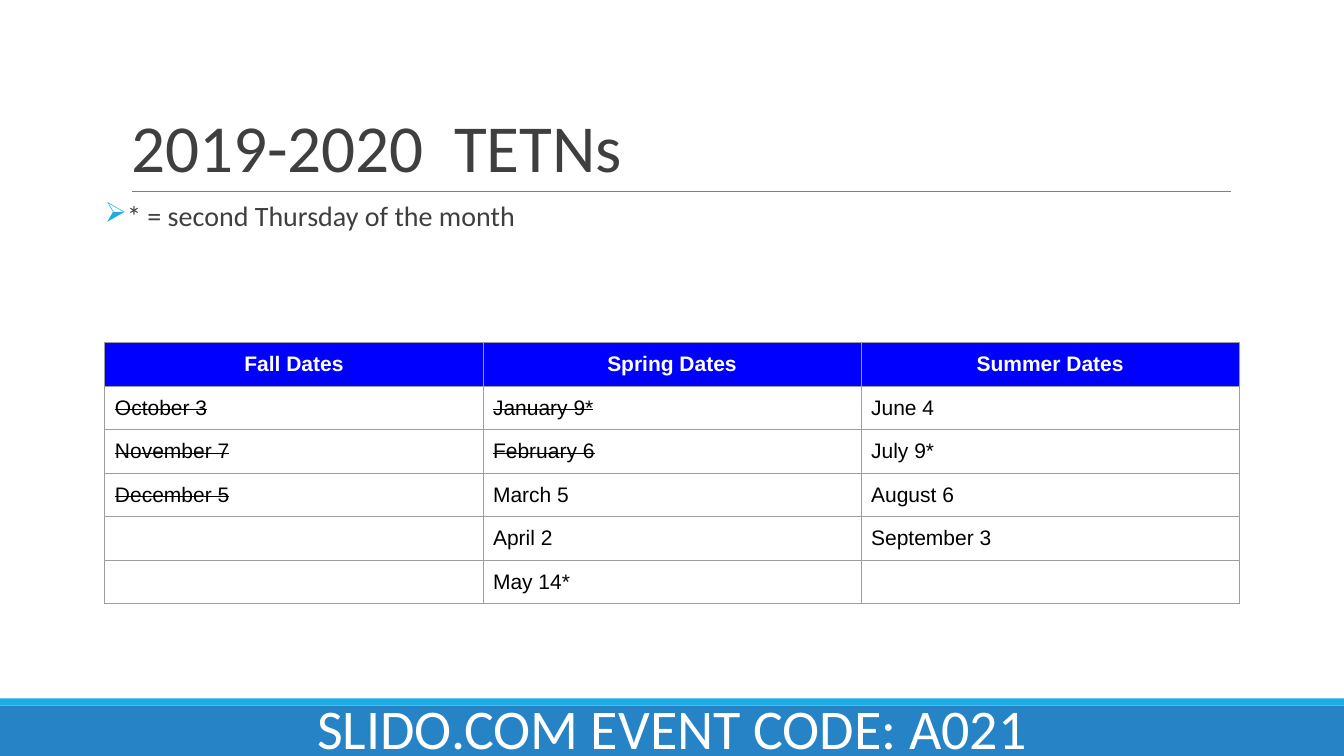
from dataclasses import dataclass
from lxml import etree
from pptx import Presentation
from pptx.dml.color import RGBColor as RGB
from pptx.enum.shapes import MSO_CONNECTOR as Line, MSO_SHAPE as Shape
from pptx.enum.text import MSO_ANCHOR as Anchor, MSO_AUTO_SIZE as Fit, PP_ALIGN as Align
from pptx.oxml import parse_xml
from pptx.oxml.ns import qn
from pptx.util import Inches, Pt


@dataclass(frozen=True)
class Theme:
    font: str = "Calibri"
    grid: str = "Arial"
    mark: str = "Wingdings"
    ink: str = "3F3F3F"
    rule: str = "7F7F7F"
    edge: str = "9E9E9E"
    head: str = "0000FF"
    bar: str = "2683C6"
    strip: str = "1CADE4"
    white: str = "FFFFFF"
    black: str = "000000"
    title: int = 48
    code: int = 40
    note: int = 20
    cell: int = 15


THEME = Theme()
NS = "http://schemas.openxmlformats.org/drawingml/2006/main"
HEADS = ["Fall Dates", "Spring Dates", "Summer Dates"]
DATES = [
    ["October 3", "January 9*", "June 4"],
    ["November 7", "February 6", "July 9*"],
    ["December 5", "March 5", "August 6"],
    ["", "April 2", "September 3"],
    ["", "May 14*", ""],
]
PAST = {"October 3", "November 7", "December 5", "January 9*", "February 6"}


def style(para, size, color, font=THEME.font, bold=False):
    for run in para.runs:
        run.font.name, run.font.size, run.font.bold = font, Pt(size), bold
        run.font.color.rgb = RGB.from_string(color)


def place(shape, box):
    shape.left, shape.top, shape.width, shape.height = map(Inches, box)


def set_frame(frame, text, side=0.1):
    frame.text = text
    frame.word_wrap = True
    frame.auto_size = Fit.NONE
    frame.margin_left = frame.margin_right = Inches(side)
    frame.margin_top = frame.margin_bottom = Inches(0.05)
    return frame.paragraphs[0]


def add_bar(slide, box, color):
    bar = slide.shapes.add_shape(Shape.RECTANGLE, *map(Inches, box))
    bar.shadow.inherit = False
    bar.fill.solid()
    bar.fill.fore_color.rgb = RGB.from_string(color)
    bar.line.fill.background()


def add_title(slide, box):
    left, top, width, height = box
    title = slide.shapes.title
    place(title, box)
    para = set_frame(title.text_frame, "2019-2020  TETNs")
    title.text_frame.vertical_anchor = Anchor.BOTTOM
    para.alignment = Align.LEFT
    para.line_spacing = 0.85
    style(para, THEME.title, THEME.ink)
    ends = left + 0.11, top + height, left + width + 0.01, top + height
    rule = slide.shapes.add_connector(Line.STRAIGHT, *map(Inches, ends))
    rule.line.color.rgb = RGB.from_string(THEME.rule)
    rule.line.width = Pt(0.75)
    etree.SubElement(rule._element.spPr, qn("a:effectLst"))


def add_note(slide, box):
    note = slide.shapes.add_textbox(*map(Inches, box))
    para = set_frame(note.text_frame, "* = second Thursday of the month", 0)
    para.line_spacing = 0.9
    props = para._p.get_or_add_pPr()
    props.set("marL", str(Inches(0.1)))
    props.set("indent", str(-Inches(0.1)))
    color = etree.SubElement(props, qn("a:buClr"))
    etree.SubElement(color, qn("a:srgbClr"), val=THEME.strip)
    etree.SubElement(props, qn("a:buFont"), typeface=THEME.mark,
                     pitchFamily="2", charset="2")
    etree.SubElement(props, qn("a:buChar"), char="Ø")
    style(para, THEME.note, THEME.ink)


def add_edges(cell):
    props = cell._tc.get_or_add_tcPr()
    for side in ("lnL", "lnR", "lnT", "lnB"):
        props.append(parse_xml(
            f'<a:{side} xmlns:a="{NS}" w="{Pt(0.75)}"><a:solidFill>'
            f'<a:srgbClr val="{THEME.edge}"/></a:solidFill></a:{side}>'))


def fill_cell(cell, text, head):
    add_edges(cell)
    cell.fill.solid()
    cell.fill.fore_color.rgb = RGB.from_string(THEME.head if head else THEME.white)
    if not text:
        return
    cell.margin_left = cell.margin_right = Inches(0.1)
    cell.margin_top = cell.margin_bottom = Inches(0.1)
    cell.text_frame.text = text
    para = cell.text_frame.paragraphs[0]
    para.alignment = Align.CENTER if head else Align.LEFT
    style(para, THEME.cell, THEME.white if head else THEME.black, THEME.grid, head)
    if text in PAST:
        para.runs[0]._r.get_or_add_rPr().set("strike", "sngStrike")


def add_dates(slide, box):
    rows = [HEADS] + DATES
    frame = slide.shapes.add_table(len(rows), len(HEADS), *map(Inches, box))
    table = frame.table
    table.horz_banding = False
    for col in table.columns:
        col.width = Inches(box[2] / len(HEADS))
    for r, row in enumerate(rows):
        table.rows[r].height = Inches(box[3] / len(rows))
        for c, text in enumerate(row):
            fill_cell(table.cell(r, c), text, r == 0)


def add_footer(slide, box):
    left, top, width, height = box
    add_bar(slide, (left, top + 0.07, width, height - 0.07), THEME.bar)
    add_bar(slide, (left, top, width, 0.07), THEME.strip)
    code = slide.shapes.add_textbox(*map(Inches, (left, top - 0.1, width, 0.77)))
    para = set_frame(code.text_frame, "SLIDO.COM EVENT CODE: A021")
    para.alignment = Align.CENTER
    style(para, THEME.code, THEME.white)


def main():
    deck = Presentation()
    deck.slide_width, deck.slide_height = Inches(13.33), Inches(7.5)
    slide = deck.slides.add_slide(deck.slide_layouts[5])
    add_title(slide, (1.2, 0.31, 11, 1.59))
    add_note(slide, (1.04, 1.96, 11, 0.5))
    add_dates(slide, (1.04, 3.4, 11.25, 2.58))
    add_footer(slide, (0, 6.93, 13.33, 0.57))
    deck.save("out.pptx")


if __name__ == "__main__":
    main()
